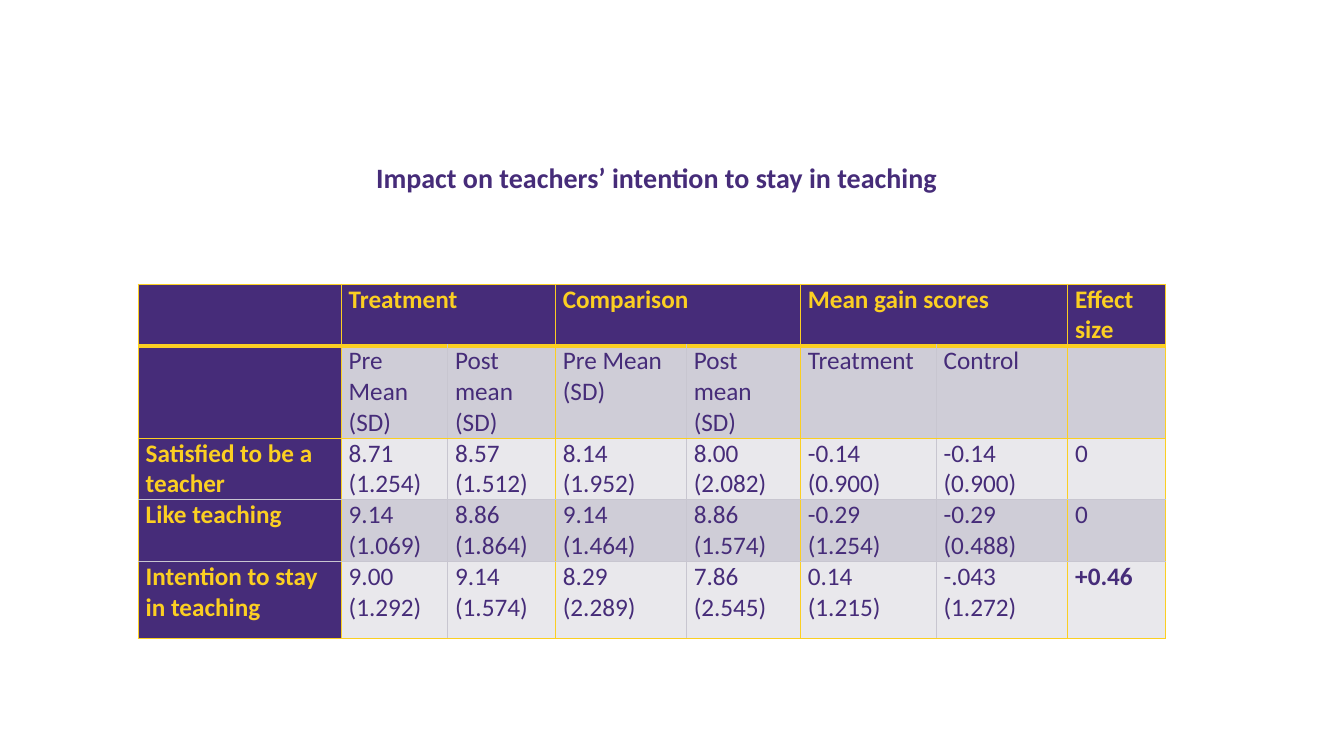
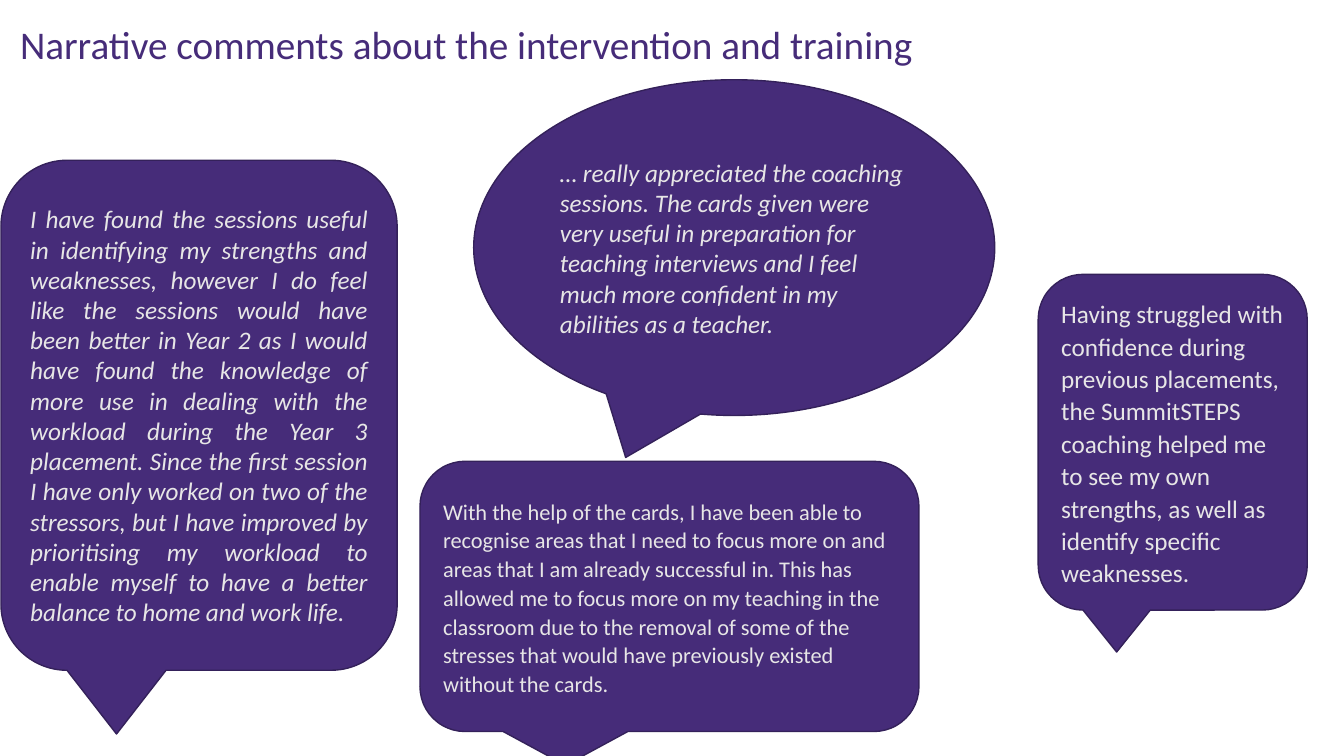
from pptx import Presentation
from pptx.dml.color import RGBColor
from pptx.enum.shapes import MSO_SHAPE
from pptx.enum.text import MSO_ANCHOR, PP_ALIGN
from pptx.oxml.ns import qn
from pptx.util import Pt
from lxml.etree import SubElement

FONT = "Calibri"
HUES = {
    "plum": "462C79", "edge": "34215A", "gold": "FBCF22", "pale": "E7E6E6",
    "dark": "CFCDD7", "light": "E9E8EC", "rule": "C8C6D0",
}
WIDTHS = [145, 76, 77, 93.5, 81.5, 97, 94, 70]
HEIGHTS = [44, 66, 44, 44, 55]
ROWS = [
    ["", "Treatment", "", "Comparison", "", "Mean gain scores", "", "Effect size"],
    ["", "Pre Mean (SD)", "Post mean (SD)", "Pre Mean\n(SD)", "Post mean (SD)",
     "Treatment", "Control", ""],
    ["Satisfied to be a teacher", "8.71 (1.254)", "8.57 (1.512)", "8.14 (1.952)",
     "8.00 (2.082)", "-0.14 (0.900)", "-0.14 (0.900)", "0"],
    ["Like teaching", "9.14 (1.069)", "8.86 (1.864)", "9.14 (1.464)",
     "8.86 (1.574)", "-0.29 (1.254)", "-0.29 (0.488)", "0"],
    ["Intention to stay in teaching", "9.00 (1.292)", "9.14 (1.574)", "8.29 (2.289)",
     "7.86 (2.545)", "0.14 (1.215)", "-.043 (1.272)", "+0.46"],
]
ROUND = MSO_SHAPE.ROUNDED_RECTANGULAR_CALLOUT
OVAL = MSO_SHAPE.OVAL_CALLOUT
QUOTES = [
    (ROUND, (0.7, 114.5, 283, 364.3),
     "I have found the sessions useful in identifying my strengths and weaknesses, "
     "however I do feel like the sessions would have been better in Year 2 as I would "
     "have found the knowledge of more use in dealing with the workload during the "
     "Year 3 placement. Since the first session I have only worked on two of the "
     "stressors, but I have improved by prioritising my workload to enable myself to "
     "have a better balance to home and work life.",
     {"italic": True, "align": PP_ALIGN.JUSTIFY}),
    (OVAL, (338.4, 57, 372.2, 239.8),
     "… really appreciated the coaching sessions. The cards given were very useful in "
     "preparation for teaching interviews and I feel much more confident in my "
     "abilities as a teacher.",
     {"italic": True}),
    (ROUND, (741.6, 196, 192.2, 239.8),
     "Having struggled with confidence during previous placements, the SummitSTEPS "
     "coaching helped me to see my own strengths, as well as identify specific "
     "weaknesses.",
     {"lead": 1.07}),
    (ROUND, (300, 329.5, 356.4, 193),
     "With the help of the cards, I have been able to recognise areas that I need to "
     "focus more on and areas that I am already successful in. This has allowed me to "
     "focus more on my teaching in the classroom due to the removal of some of the "
     "stresses that would have previously existed without the cards.",
     {"lead": 1.07, "size": 16}),
]


def hue(name):
    return RGBColor.from_string(HUES[name])


def write(frame, text, size=18, tint="plum", bold=False, italic=False,
          align=PP_ALIGN.LEFT, lead=1.0):
    for i, line in enumerate(text.split("\n")):
        para = frame.add_paragraph() if i else frame.paragraphs[0]
        para.alignment = align
        para.line_spacing = lead
        para.font.size = Pt(size)
        if line:
            run = para.add_run()
            run.text = line
            font = run.font
            font.name, font.size = FONT, Pt(size)
            font.bold, font.italic = bold, italic
            font.color.rgb = hue(tint)


def label(slide, box, text, anchor=MSO_ANCHOR.TOP, **style):
    frame = slide.shapes.add_textbox(*map(Pt, box)).text_frame
    frame.word_wrap = True
    frame.vertical_anchor = anchor
    write(frame, text, align=PP_ALIGN.CENTER, **style)


def bubble(slide, kind, box, text, style):
    shape = slide.shapes.add_shape(kind, *map(Pt, box))
    shape.shadow.inherit = False
    shape.fill.solid()
    shape.fill.fore_color.rgb = hue("plum")
    shape.line.color.rgb = hue("edge")
    shape.line.width = Pt(1)
    shape.text_frame.word_wrap = True
    shape.text_frame.vertical_anchor = MSO_ANCHOR.MIDDLE
    write(shape.text_frame, text, tint="pale", **style)


def border(cell, side, tint, width):
    props = cell._tc.get_or_add_tcPr()
    line = SubElement(props, qn("a:ln" + side), w=str(Pt(width)))
    fill = SubElement(line, qn("a:solidFill"))
    SubElement(fill, qn("a:srgbClr"), val=HUES[tint])


def upright(edge):
    return ("gold", 1) if edge in (0, 1, 3, 5, 7, 8) else ("rule", 0.75)


def level(edge):
    if edge == 1:
        return "gold", 3
    return ("gold", 1) if edge in (0, 2, len(ROWS)) else ("rule", 0.75)


def style_cell(cell, row, col):
    for side, look in (("L", upright(col)), ("R", upright(col + 1)),
                       ("T", level(row)), ("B", level(row + 1))):
        border(cell, side, *look)
    head = row == 0 or col == 0
    cell.fill.solid()
    cell.fill.fore_color.rgb = hue("plum" if head else "dark" if row % 2 else "light")
    cell.margin_left = cell.margin_right = Pt(5.4)
    cell.margin_top = cell.margin_bottom = 0
    text = ROWS[row][col]
    write(cell.text_frame, text, tint="gold" if head else "plum",
          bold=head or text.startswith("+"))


def scores(slide):
    frame = slide.shapes.add_table(len(ROWS), len(WIDTHS), Pt(98.7), Pt(203),
                                   Pt(sum(WIDTHS)), Pt(sum(HEIGHTS)))
    table = frame.table
    table.first_row = table.horz_banding = False
    for col, width in zip(table.columns, WIDTHS):
        col.width = Pt(width)
    for row, height in zip(table.rows, HEIGHTS):
        row.height = Pt(height)
    for row in range(len(ROWS)):
        for col in range(len(WIDTHS)):
            style_cell(table.cell(row, col), row, col)
    for col in (1, 3, 5):
        table.cell(0, col).merge(table.cell(0, col + 1))


def main():
    deck = Presentation()
    deck.slide_width, deck.slide_height = Pt(960), Pt(540)
    first, second = [deck.slides.add_slide(deck.slide_layouts[6]) for _ in range(2)]
    scores(first)
    label(first, (256, 111, 426, 31.5), "Impact on teachers’ intention to stay in teaching",
          anchor=MSO_ANCHOR.MIDDLE, size=20, bold=True)
    label(second, (0, 15, 666, 47.5),
          "Narrative comments about the intervention and training", size=28, lead=0.9)
    for quote in QUOTES:
        bubble(second, *quote)
    deck.save("out.pptx")


if __name__ == "__main__":
    main()
